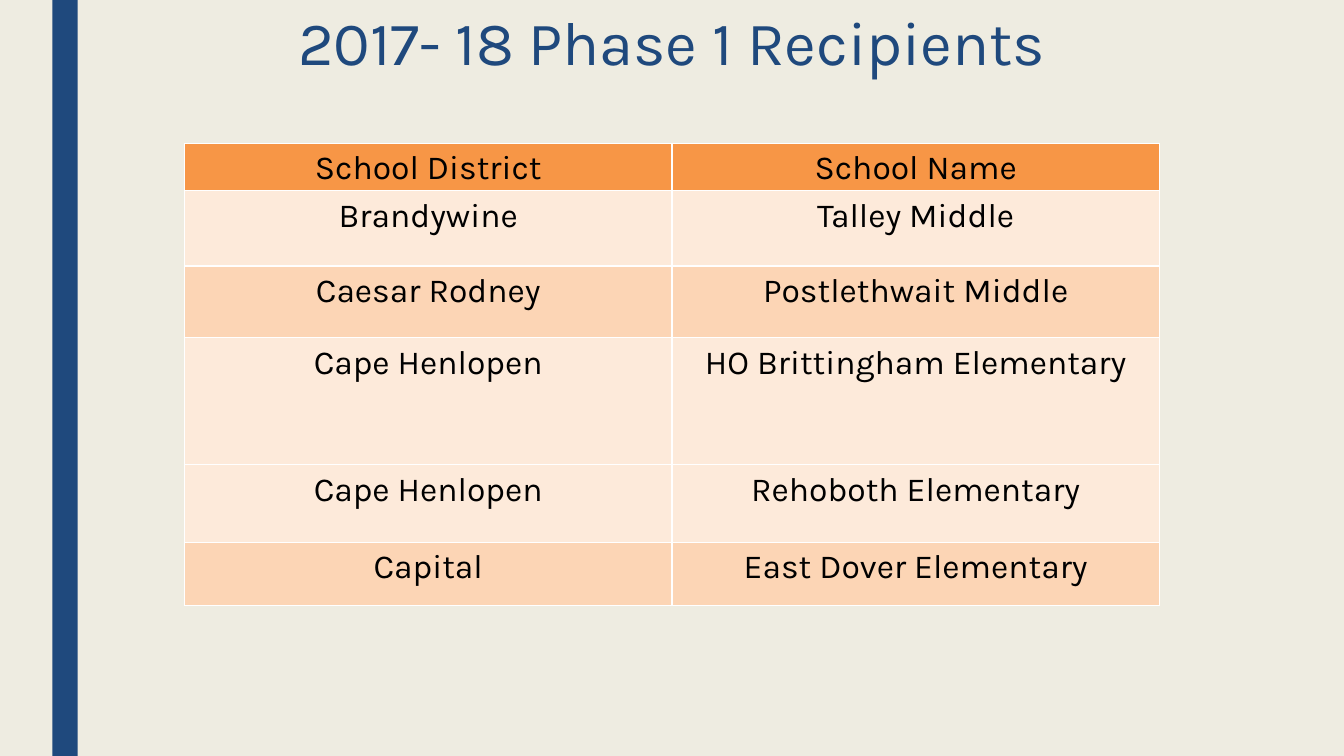
from lxml.etree import SubElement
from pptx import Presentation
from pptx.dml.color import RGBColor as Color
from pptx.enum.shapes import MSO_SHAPE as Shape
from pptx.enum.text import MSO_ANCHOR as Anchor, PP_ALIGN as Align
from pptx.oxml.ns import qn
from pptx.util import Inches, Pt

COLORS = {
    "background": "EEECE1",
    "navy": "1F497D",
    "header": "F79646",
    "light": "FDEADA",
    "dark": "FCD5B5",
    "text": "000000",
    "border": "FFFFFF",
}

RECIPIENTS = [
    ("School District", "School Name", 0.47, "header"),
    ("Brandywine", "Talley Middle", 0.75, "light"),
    ("Caesar Rodney", "Postlethwait Middle", 0.71, "dark"),
    ("Cape Henlopen", "HO Brittingham Elementary", 1.26, "light"),
    ("Cape Henlopen", "Rehoboth Elementary", 0.77, "light"),
    ("Capital", "East Dover Elementary", 0.63, "dark"),
]


class SlideBuilder:
    font = "Karla"

    def __init__(self, page):
        self.page = page

    def paint(self, fill, color):
        fill.solid()
        fill.fore_color.rgb = Color.from_string(COLORS[color])

    def background(self, color):
        self.paint(self.page.background.fill, color)

    def label(self, frame, text, size, color, spacing):
        para = frame.paragraphs[0]
        para.text = text
        para.alignment = Align.CENTER
        para.line_spacing = spacing
        para.font.name = self.font
        para.font.size = Pt(size)
        para.font.bold = False
        para.font.color.rgb = Color.from_string(COLORS[color])

    def bar(self, left, top, width, height, color):
        bar = self.page.shapes.add_shape(
            Shape.RECTANGLE, Inches(left), Inches(top), Inches(width), Inches(height))
        bar.shadow.inherit = False
        bar.line.fill.background()
        self.paint(bar.fill, color)

    def title(self, left, top, width, height, text):
        box = self.page.shapes.add_textbox(
            Inches(left), Inches(top), Inches(width), Inches(height))
        box.text_frame.word_wrap = True
        box.text_frame.vertical_anchor = Anchor.TOP
        self.label(box.text_frame, text, 44, "navy", 0.89)

    def border(self, cell):
        properties = cell._tc.get_or_add_tcPr()
        for side in ("lnL", "lnR", "lnT", "lnB"):
            line = SubElement(properties, qn(f"a:{side}"), w=str(Pt(1)))
            fill = SubElement(line, qn("a:solidFill"))
            SubElement(fill, qn("a:srgbClr"), val=COLORS["border"])

    def cell(self, cell, text, color):
        cell.margin_left = cell.margin_right = Inches(0.05)
        cell.margin_top = cell.margin_bottom = 0
        self.border(cell)
        self.paint(cell.fill, color)
        self.label(cell.text_frame, text, 24, "text", 1.15)

    def table(self, left, top, width, rows):
        height = sum(row[2] for row in rows)
        table = self.page.shapes.add_table(
            len(rows), 2, Inches(left), Inches(top), Inches(width), Inches(height)).table
        table.horz_banding = False
        for row, (district, school, row_height, color) in zip(table.rows, rows):
            row.height = Inches(row_height)
            for cell, text in zip(row.cells, (district, school)):
                self.cell(cell, text, color)


def main():
    deck = Presentation()
    deck.slide_width, deck.slide_height = Inches(13.33), Inches(7.5)
    slide = SlideBuilder(deck.slides.add_slide(deck.slide_layouts[6]))
    slide.background("background")
    slide.bar(0.52, 0, 0.25, 7.5, "navy")
    slide.title(2.17, 0.08, 9, 1.25, "2017- 18 Phase 1 Recipients")
    slide.table(1.83, 1.42, 9.67, RECIPIENTS)
    deck.save("out.pptx")


if __name__ == "__main__":
    main()
